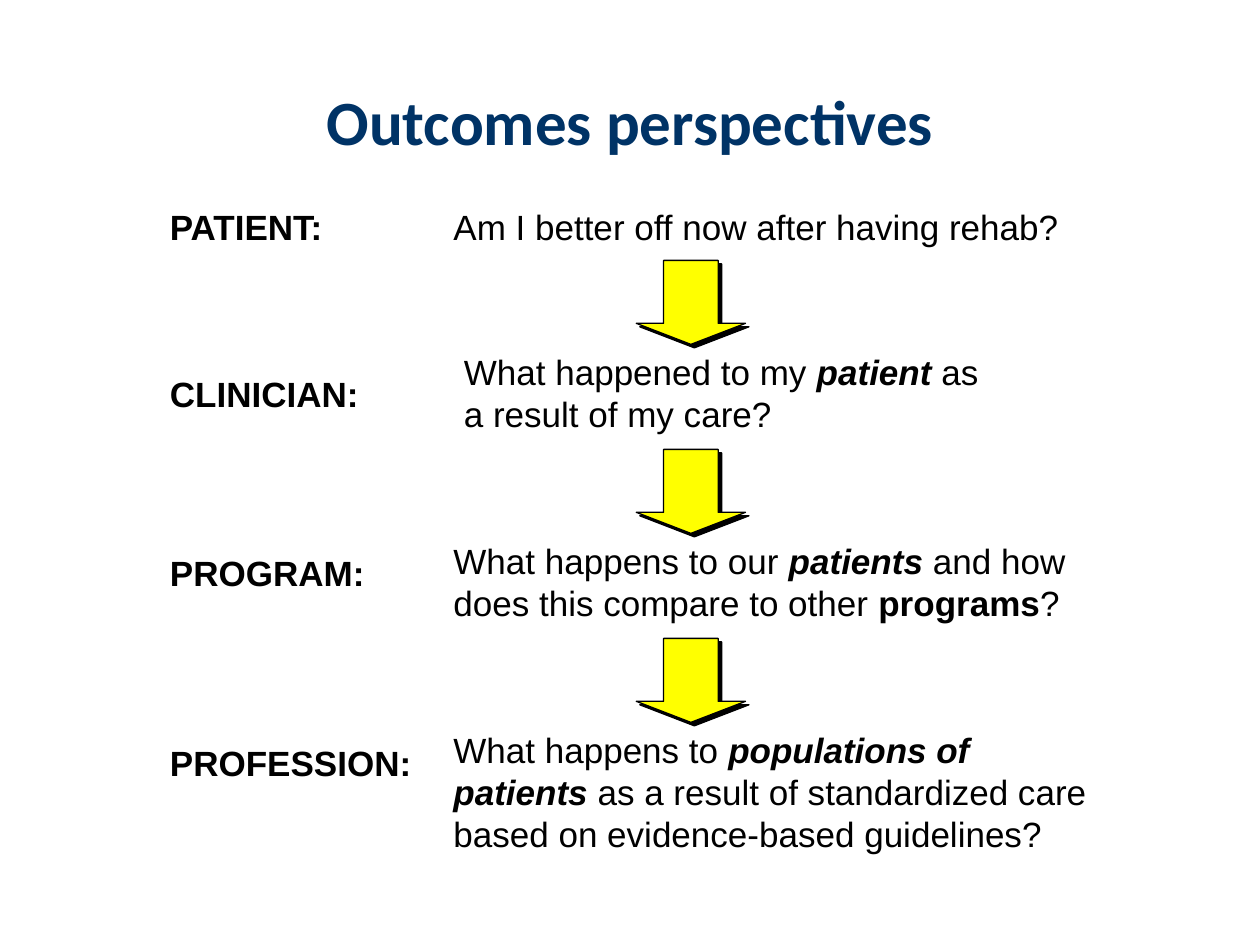
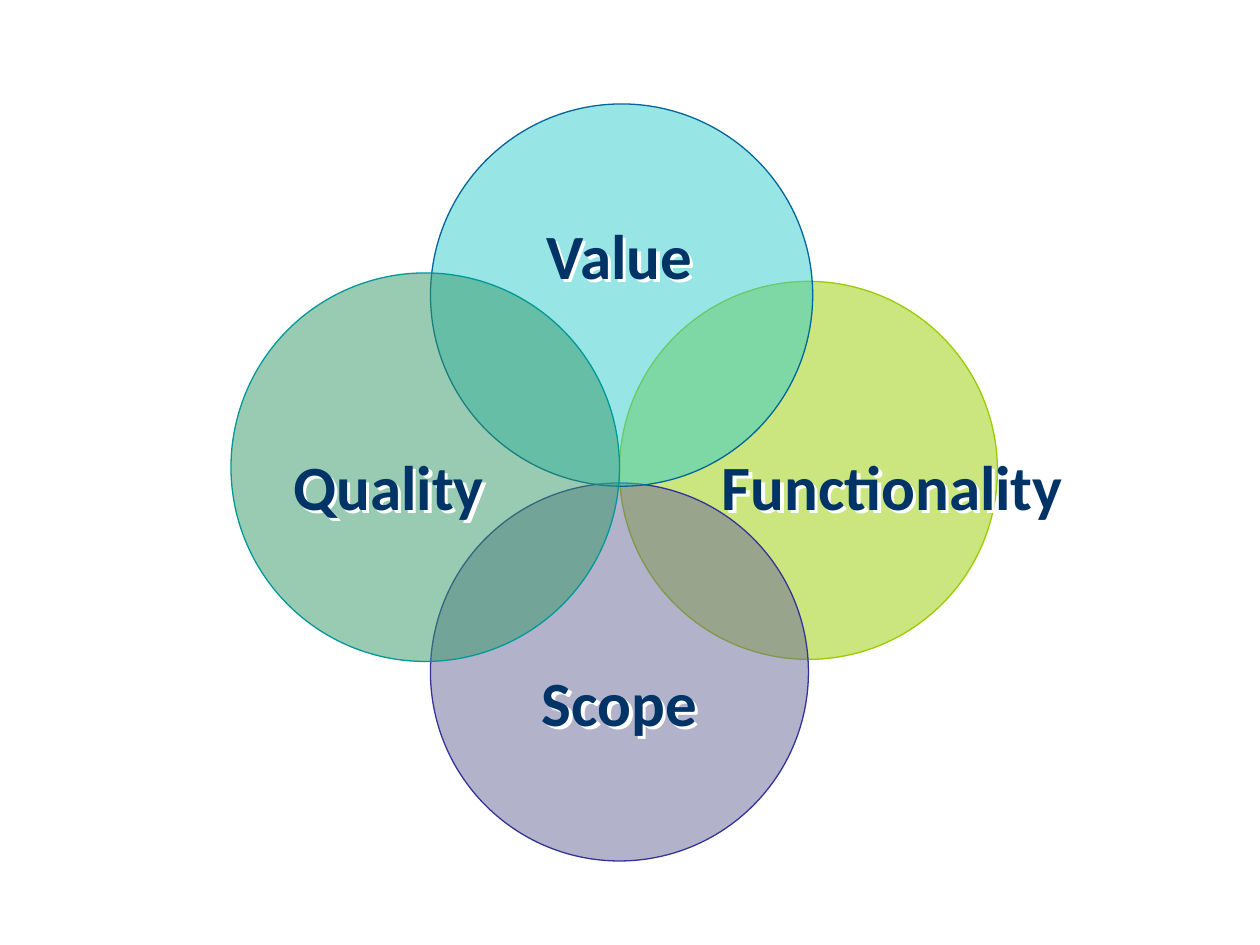
from lxml import etree
from pptx import Presentation
from pptx.dml.color import RGBColor
from pptx.enum.shapes import MSO_SHAPE
from pptx.enum.text import MSO_ANCHOR, MSO_AUTO_SIZE, PP_ALIGN
from pptx.oxml.ns import qn
from pptx.util import Inches, Pt

COLORS = {
    "navy": "003366", "black": "000000", "white": "FFFFFF", "yellow": "FFFF00",
    "lime": "99CC00", "slate": "666699", "indigo": "333399", "aqua": "33CCCC",
    "blue": "006699", "green": "339966", "teal": "009999",
}
HEADING = {"font": "Calibri", "size": 36, "color": "navy", "bold": True}
BODY = {"font": "Arial", "size": 20, "color": "black"}

# The slide is a grid of 120 columns by 90 rows.
WIDTH, HEIGHT = Inches(10), Inches(7.5)
COL, ROW = WIDTH / 120, HEIGHT / 90

# Label, runs (text, style), and rows/columns measured inside the flow box:
# question row, label drop, question indent, question width
PERSPECTIVES = [
    ("PATIENT:", [("Am I better off now after having rehab?", "")], 0, 0, 0, 64),
    ("CLINICIAN:", [("What happened to my ", ""), ("patient", "bi"),
                    (" as a result of my care?", "")], 13.8, 2.1, 1, 54),
    ("PROGRAM:", [("What happens to our ", ""), ("patients ", "bi"),
                  ("and how does this compare to other ", ""),
                  ("programs", "b"), ("?", "")], 31.8, 1.1, 0, 64),
    ("PROFESSION:", [("What happens to ", ""), ("populations of patients", "bi"),
                     (" as a result of standardized care based on "
                      "evidence-based guidelines?", "")], 49.8, 1.2, 0, 63),
]
# Fill, line, centre column, centre row, radius
CIRCLES = [
    ("lime", "lime", 55, 34.8, 18),
    ("slate", "indigo", 37, 54, 18),
    ("aqua", "blue", 37.2, 18.1, 18.2),
    ("green", "teal", 18.5, 34.5, 18.5),
]
# Text, centre column, top row
CIRCLE_LABELS = [("Value", 37, 10), ("Scope", 37, 52.6),
                 ("Functionality", 63, 32), ("Quality", 15, 32)]


def rgb(name):
    return RGBColor.from_string(COLORS[name])


def place(col, row, cols, rows):
    return [round(v) for v in (col * COL, row * ROW, cols * COL, rows * ROW)]


def add_run(p, text, font, size, color, bold=False, italic=False):
    r = p.add_run()
    r.text = text
    r.font.name, r.font.size = font, Pt(size)
    r.font.bold, r.font.italic = bold, italic
    r.font.color.rgb = rgb(color)


def add_text(s, box, align=PP_ALIGN.LEFT):
    """Add an empty text box and return it with its first paragraph."""
    sp = s.shapes.add_textbox(*place(*box))
    tf = sp.text_frame
    tf.word_wrap = True
    tf.auto_size = MSO_AUTO_SIZE.SHAPE_TO_FIT_TEXT
    p = tf.paragraphs[0]
    p.alignment = align
    return sp, p


def add_figure(s, kind, box, fill, line):
    sp = s.shapes.add_shape(kind, *place(*box))
    sp.shadow.inherit = False
    sp.fill.solid()
    sp.fill.fore_color.rgb = rgb(fill)
    sp.line.color.rgb = rgb(line)
    sp.line.width = Pt(0.75)
    return sp


def add_hard_shadow(sp, color):
    sp.shadow.inherit = False
    effects = sp.element.spPr.find(qn("a:effectLst"))
    shadow = etree.SubElement(effects, qn("a:outerShdw"), dist=str(Pt(2.8)),
                              dir=str(45 * 60000), algn="ctr", rotWithShape="0")
    etree.SubElement(shadow, qn("a:srgbClr"), val=COLORS[color])


def set_opacity(sp, percent):
    color = sp.element.spPr.find(qn("a:solidFill")).find(qn("a:srgbClr"))
    etree.SubElement(color, qn("a:alpha"), val=str(percent * 1000))


def add_title(s, text, box):
    sp = s.shapes.title
    sp.left, sp.top, sp.width, sp.height = place(*box)
    sp.text_frame.vertical_anchor = MSO_ANCHOR.MIDDLE
    p = sp.text_frame.paragraphs[0]
    p.alignment = PP_ALIGN.CENTER
    add_run(p, text, **HEADING)


def add_perspective_flow(s, left, top):
    for i, (label, runs, row, drop, indent, cols) in enumerate(PERSPECTIVES):
        y = top + row
        if i:
            arrow = add_figure(s, MSO_SHAPE.DOWN_ARROW,
                               (left + 45.6, y - 8, 10.4, 8), "yellow", "black")
            arrow.adjustments[0], arrow.adjustments[1] = 0.5, 0.25
            add_hard_shadow(arrow, "black")
        _, p = add_text(s, (left, y + drop, 34, 5.2))
        add_run(p, label, bold=True, **BODY)
        _, p = add_text(s, (left + 27 + indent, y, cols, 5.2))
        for text, style in runs:
            add_run(p, text, bold="b" in style, italic="i" in style, **BODY)


def add_overlapping_circles(s, left, top):
    for fill, line, x, y, radius in CIRCLES:
        box = (left + x - radius, top + y - radius, 2 * radius, 2 * radius)
        set_opacity(add_figure(s, MSO_SHAPE.OVAL, box, fill, line), 50)
    for text, x, y in CIRCLE_LABELS:
        sp, p = add_text(s, (left + x - 24, top + y, 48, 8.4), PP_ALIGN.CENTER)
        add_run(p, text, **HEADING)
        add_hard_shadow(sp, "white")


def main():
    prs = Presentation()
    prs.slide_width, prs.slide_height = WIDTH, HEIGHT
    title_only, blank = prs.slide_layouts[5], prs.slide_layouts[6]

    s = prs.slides.add_slide(title_only)
    add_title(s, "Outcomes perspectives", (6, 4, 108, 15))
    add_perspective_flow(s, 15, 19)

    s = prs.slides.add_slide(blank)
    add_overlapping_circles(s, 22, 10)

    prs.save("out.pptx")


if __name__ == "__main__":
    main()
